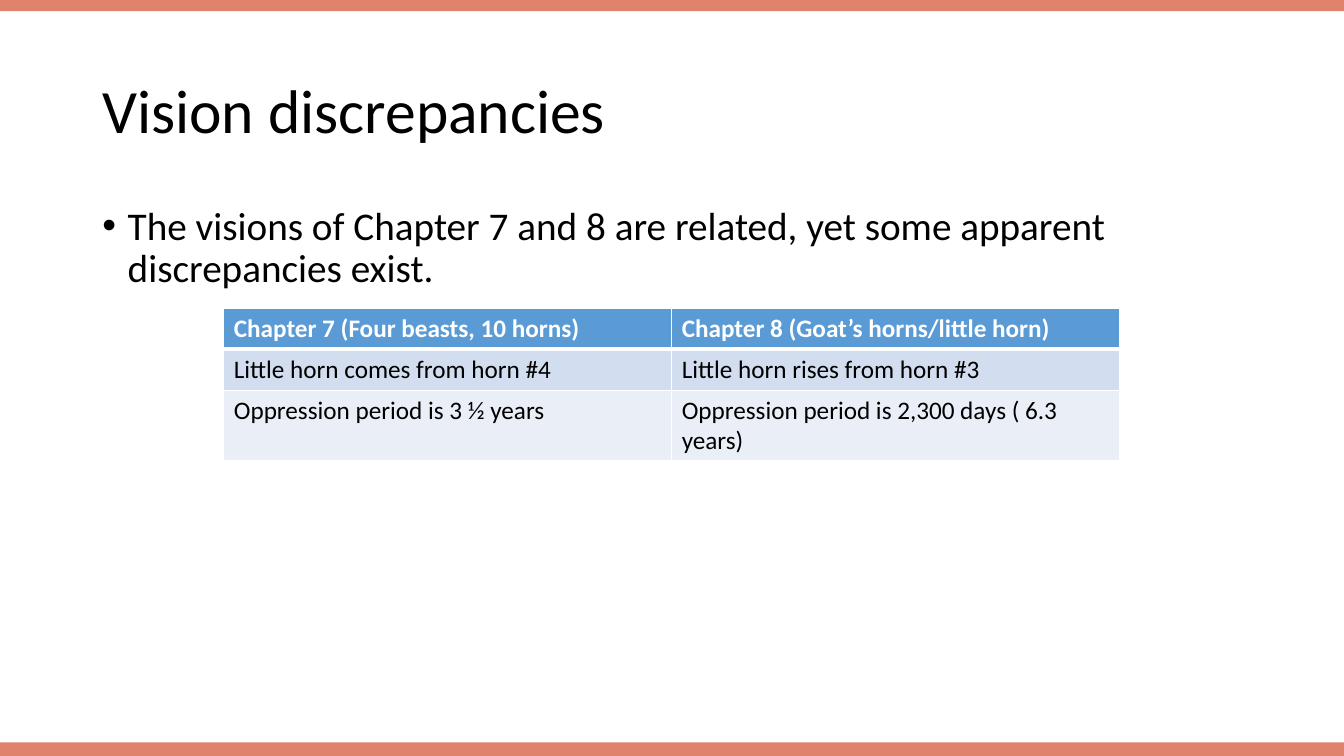
"""Build the slide on discrepancies between two visions."""
import pptx
import pptx.dml.color
import pptx.enum.shapes
import pptx.enum.text
import pptx.oxml
import pptx.oxml.ns
import pptx.util
from pptx.util import Cm

COLORS = {"bar": "D24726", "text": "000000", "white": "FFFFFF",
          "head": "5B9BD5", "odd": "D2DEEF", "even": "EAEFF7"}
NS = pptx.oxml.ns.nsdecls("a")


def color(name):
    return pptx.dml.color.RGBColor.from_string(COLORS[name])


def style(para, size, ink="text", bold=False):
    para.font.name = "Calibri"
    para.font.size = pptx.util.Pt(size)
    para.font.bold = bold
    para.font.color.rgb = color(ink)


deck = pptx.Presentation()
deck.slide_width, deck.slide_height = Cm(33.87), Cm(19.05)
slide = deck.slides.add_slide(deck.slide_layouts[6])

for top, height in [(0, 0.28), (18.71, 0.34)]:
    bar = slide.shapes.add_shape(pptx.enum.shapes.MSO_SHAPE.RECTANGLE,
                                 0, Cm(top), deck.slide_width, Cm(height))
    bar.shadow.inherit = False
    bar.line.fill.background()
    bar.fill.solid()
    bar.fill.fore_color.rgb = color("bar")
    tint = bar.fill._xPr.find(".//" + pptx.oxml.ns.qn("a:srgbClr"))
    tint.append(pptx.oxml.parse_xml(f'<a:alpha {NS} val="67000"/>'))

anchor = pptx.enum.text.MSO_ANCHOR
texts = [
    ("Vision discrepancies", 1.02, 3.68, 44, anchor.MIDDLE),
    ("The visions of Chapter 7 and 8 are related, yet some apparent "
     "discrepancies exist.", 5.07, 12.09, 28, anchor.TOP),
]
for words, top, height, size, place in texts:
    box = slide.shapes.add_textbox(Cm(2.33), Cm(top), Cm(29.21), Cm(height))
    frame = box.text_frame
    frame.word_wrap = True
    frame.vertical_anchor = place
    para = frame.paragraphs[0]
    para.text = words
    para.line_spacing = 0.9
    if place == anchor.TOP:
        props = para._p.get_or_add_pPr()
        props.set("marL", str(Cm(0.64)))
        props.set("indent", str(Cm(-0.64)))
        props.append(pptx.oxml.parse_xml(f'<a:buFont {NS} typeface="Arial"/>'))
        props.append(pptx.oxml.parse_xml(f'<a:buChar {NS} char="•"/>'))
    style(para, size)

rows = [
    ("head", "Chapter 7 (Four beasts, 10 horns)",
     "Chapter 8 (Goat’s horns/little horn)"),
    ("odd", "Little horn comes from horn #4", "Little horn rises from horn #3"),
    ("even", "Oppression period is 3 ½ years",
     "Oppression period is 2,300 days ( 6.3 years)"),
]
table = slide.shapes.add_table(len(rows), 2, Cm(5.64), Cm(7.77),
                               Cm(22.58), Cm(3.09)).table
for r, (shade, *words) in enumerate(rows):
    table.rows[r].height = Cm(1.03)
    head = shade == "head"
    for c, text in enumerate(words):
        cell = table.cell(r, c)
        cell.text = text
        style(cell.text_frame.paragraphs[0], 18, "white" if head else "text", head)
        props = cell._tc.get_or_add_tcPr()
        for side in "LRTB":
            thick = (head and side == "B") or (r == 1 and side == "T")
            width = pptx.util.Pt(3 if thick else 1)
            props.append(pptx.oxml.parse_xml(
                f'<a:ln{side} {NS} w="{width}"><a:solidFill>'
                f'<a:srgbClr val="{COLORS["white"]}"/></a:solidFill></a:ln{side}>'))
        cell.fill.solid()
        cell.fill.fore_color.rgb = color(shade)

deck.save("out.pptx")
